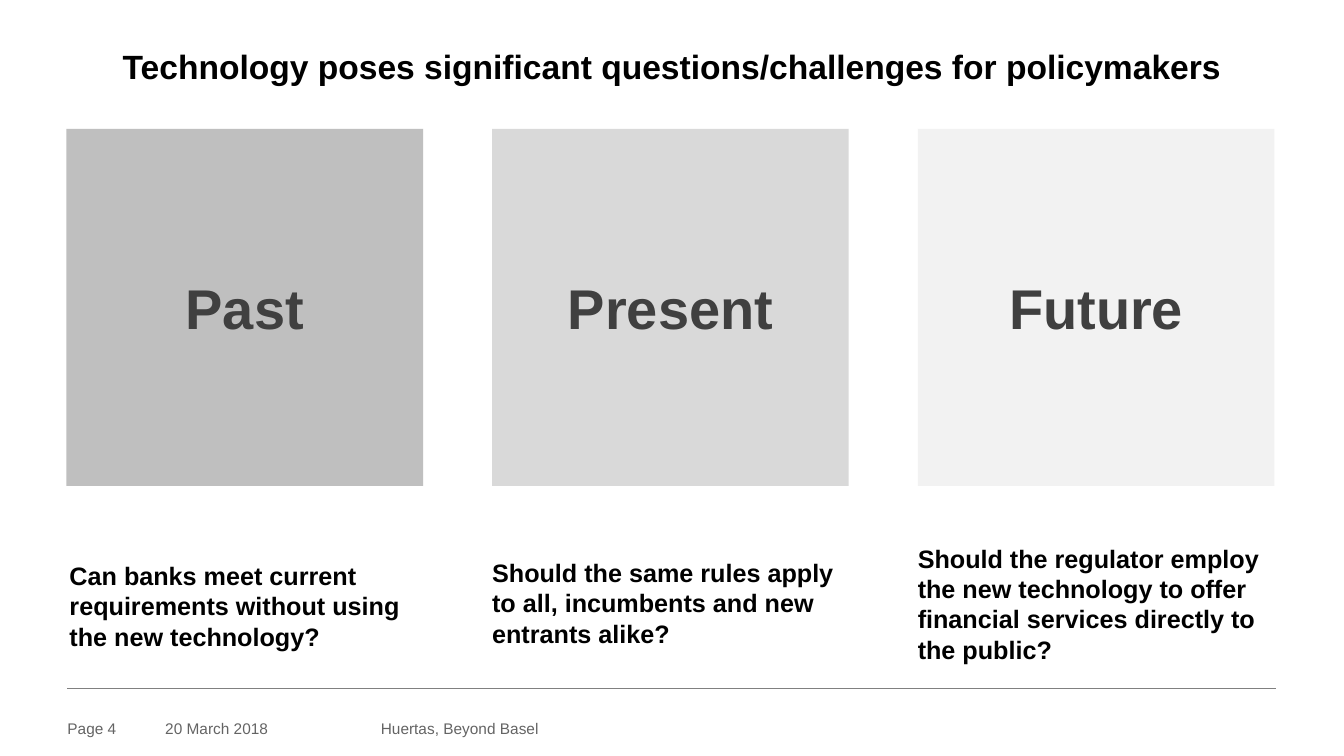
from pptx import Presentation
from pptx.dml.color import RGBColor
from pptx.enum.shapes import MSO_CONNECTOR, MSO_SHAPE
from pptx.enum.text import MSO_ANCHOR, PP_ALIGN
from pptx.oxml.ns import qn
from pptx.util import Inches, Pt
from lxml.etree import SubElement


def rgb(value):
    return RGBColor.from_string(value)


def write(sp, text, size, color, bold=False, align=PP_ALIGN.LEFT,
          anchor=MSO_ANCHOR.MIDDLE, inset=0, wrap=True, spacing=1.0):
    tf = sp.text_frame
    frame = {"word_wrap": wrap, "vertical_anchor": anchor}
    for side in ("left", "top", "right", "bottom"):
        frame[f"margin_{side}"] = Inches(inset)
    for name, value in frame.items():
        setattr(tf, name, value)
    p = tf.paragraphs[0]
    p.alignment, p.line_spacing = align, spacing
    r = p.add_run()
    r.text = text
    for name, value in {"name": "Arial", "size": Pt(size), "bold": bold}.items():
        setattr(r.font, name, value)
    r.font.color.rgb = rgb(color)


prs = Presentation()
prs.slide_width, prs.slide_height = Inches(13.34), Inches(7.5)
s = prs.slides.add_slide(prs.slide_layouts[6])

# Grid
LEFT, PITCH, SIDE, TOP = 0.66, 4.225, 3.54, 1.28
MARGIN, WIDTH = 0.67, 12

# Title
sp = s.shapes.add_textbox(*map(Inches, (MARGIN, 0.22, WIDTH, 0.94)))
write(sp, "Technology poses significant questions/challenges for policymakers",
      24, "000000", bold=True, align=PP_ALIGN.CENTER, spacing=0.85)

# Three eras, each a square above its question: name, fill, question, box
eras = [
    ("Past", "BFBFBF",
     "Can banks meet current requirements without using the new technology?",
     (0.03, 5.22, 3.47, 1.58)),
    ("Present", "D9D9D9",
     "Should the same rules apply to all, incumbents and new entrants alike?",
     (0, 5.16, 3.54, 1.64)),
    ("Future", "F2F2F2",
     "Should the regulator employ the new technology to offer financial "
     "services directly to the public?",
     (0, 5.16, 3.56, 1.66)),
]
for col, (era, fill, question, (indent, top, width, height)) in enumerate(eras):
    x = LEFT + col * PITCH
    sp = s.shapes.add_shape(MSO_SHAPE.RECTANGLE, *map(Inches, (x, TOP, SIDE, SIDE)))
    sp.shadow.inherit = False
    sp.fill.solid()
    sp.fill.fore_color.rgb = rgb(fill)
    sp.line.fill.background()
    write(sp, era, 40, "404040", bold=True, align=PP_ALIGN.CENTER, inset=0.2)

    sp = s.shapes.add_textbox(*map(Inches, (x + indent, top, width, height)))
    write(sp, question, 18, "000000", bold=True)

# Footer rule
rule = s.shapes.add_connector(
    MSO_CONNECTOR.STRAIGHT, *map(Inches, (MARGIN, 6.83, MARGIN + WIDTH, 6.83)))
rule.line.color.rgb = rgb("808080")
rule.line.width = Pt(0.25)
SubElement(rule._element.spPr, qn("a:effectLst"))

# Footer text
for text, x, width, wrap in [("Page 4", MARGIN, 0.97, True),
                             ("20 March 2018", 1.64, 1.5, False),
                             ("Huertas, Beyond Basel", 3.78, 5.01, True)]:
    sp = s.shapes.add_textbox(*map(Inches, (x, 7.13, width, 0.22)))
    write(sp, text, 11, "646464", anchor=MSO_ANCHOR.TOP, wrap=wrap)

prs.save("out.pptx")
